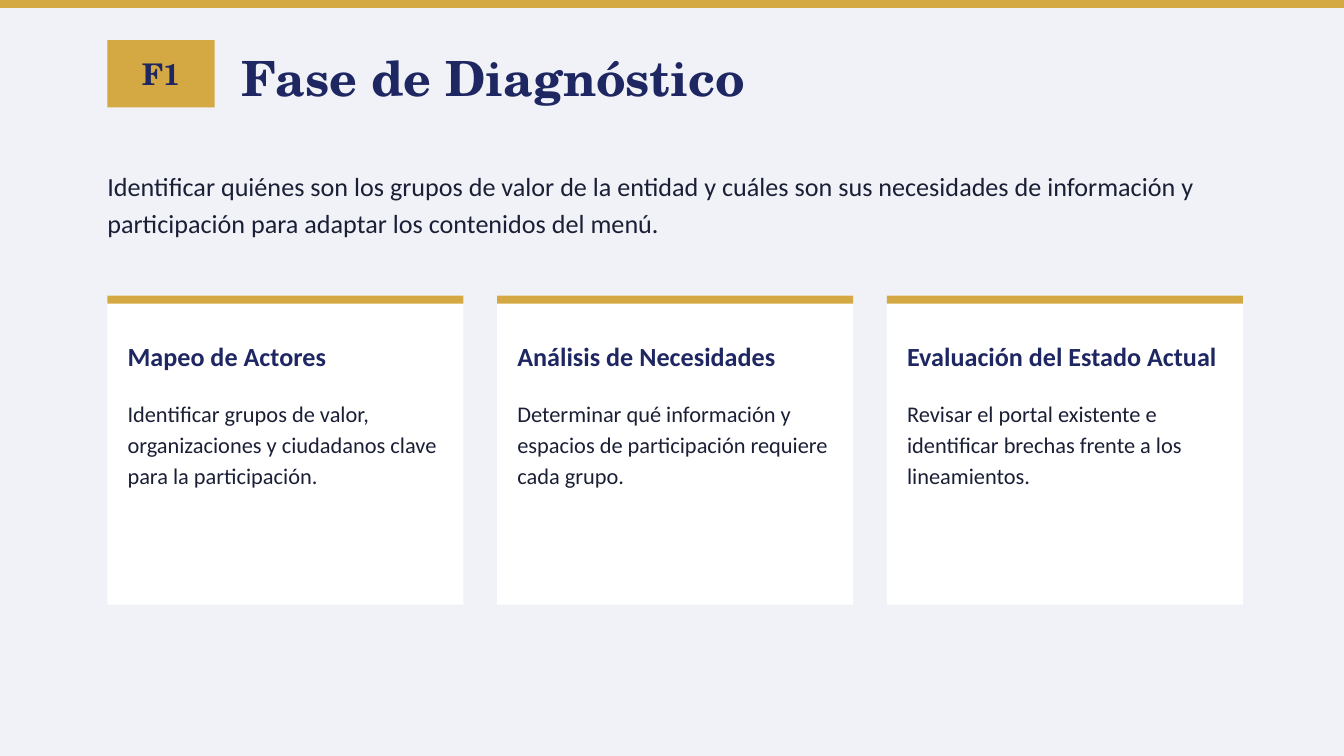
import pptx
import pptx.dml.color
import pptx.enum.shapes
import pptx.enum.text
import pptx.util

Cm = pptx.util.Cm
ALIGN = pptx.enum.text.PP_ALIGN
ANCHOR = pptx.enum.text.MSO_ANCHOR

COLORS = {
    "background": "F0F2F7",
    "gold": "D4A843",
    "navy": "1E2761",
    "ink": "1A1F36",
    "white": "FFFFFF",
}
STYLES = {
    "badge": {"name": "TeX Gyre Schola", "size": pptx.util.Pt(16), "bold": True},
    "title": {"name": "TeX Gyre Schola", "size": pptx.util.Pt(26), "bold": True},
    "intro": {"name": "Calibri", "size": pptx.util.Pt(14), "bold": False},
    "heading": {"name": "Calibri", "size": pptx.util.Pt(14), "bold": True},
    "detail": {"name": "Calibri", "size": pptx.util.Pt(12), "bold": False},
}
CARDS = [
    ("Mapeo de Actores",
     "Identificar grupos de valor, organizaciones y ciudadanos clave para la participación."),
    ("Análisis de Necesidades",
     "Determinar qué información y espacios de participación requiere cada grupo."),
    ("Evaluación del Estado Actual",
     "Revisar el portal existente e identificar brechas frente a los lineamientos."),
]
BAR = Cm(0.15)


def rgb(color):
    """Return the named palette colour."""
    return pptx.dml.color.RGBColor.from_string(COLORS[color])


def add_panel(page, box, color):
    """Draw a plain filled rectangle in the box."""
    panel = page.shapes.add_shape(pptx.enum.shapes.MSO_SHAPE.RECTANGLE, *box)
    panel.shadow.inherit = False
    panel.fill.solid()
    panel.fill.fore_color.rgb = rgb(color)
    panel.line.fill.background()
    return panel


def write(shape, text, style, color, anchor=ANCHOR.MIDDLE, align=ALIGN.LEFT, spacing=1.0):
    """Write one formatted paragraph into a shape without margins."""
    frame = shape.text_frame
    settings = {
        "word_wrap": True, "vertical_anchor": anchor,
        "auto_size": pptx.enum.text.MSO_AUTO_SIZE.NONE,
        "margin_left": 0, "margin_top": 0, "margin_right": 0, "margin_bottom": 0,
    }
    for name, value in settings.items():
        setattr(frame, name, value)
    para = frame.paragraphs[0]
    para.alignment = align
    para.line_spacing = spacing
    span = para.add_run()
    span.text = text
    for name, value in STYLES[style].items():
        setattr(span.font, name, value)
    span.font.color.rgb = rgb(color)


def add_header(page, box):
    """Place the phase badge and the slide title in the box."""
    left, top, width, height = box
    badge_width, title_offset = Cm(2.03), Cm(2.54)
    badge = add_panel(page, (left, top, badge_width, Cm(1.27)), "gold")
    write(badge, "F1", "badge", "navy", align=ALIGN.CENTER)
    title = page.shapes.title
    title.left, title.top = left + title_offset, top
    title.width, title.height = width - title_offset, height
    write(title, "Fase de Diagnóstico", "title", "navy")


def add_intro(page, box):
    """Place the introductory paragraph in the box."""
    write(page.shapes.add_textbox(*box),
          "Identificar quiénes son los grupos de valor de la entidad y cuáles son sus "
          "necesidades de información y participación para adaptar los contenidos del menú.",
          "intro", "ink", spacing=1.2)


def add_card(page, box, heading, detail):
    """Place a white card with a gold top edge, a heading and a detail text."""
    left, top, width, height = box
    inset = Cm(0.38)
    inner_left, inner_width = left + inset, width - 2 * inset
    add_panel(page, box, "white")
    add_panel(page, (left, top, width, BAR), "gold")
    heading_box = page.shapes.add_textbox(inner_left, top + Cm(0.64), inner_width, Cm(1.02))
    write(heading_box, heading, "heading", "navy")
    detail_box = page.shapes.add_textbox(inner_left, top + Cm(1.9), inner_width, Cm(3.3))
    write(detail_box, detail, "detail", "ink", anchor=ANCHOR.TOP, spacing=1.15)


def add_cards(page, box):
    """Share the box among equal cards in one row."""
    left, top, width, height = box
    gap = Cm(0.64)
    card_width = (width - gap * (len(CARDS) - 1)) // len(CARDS)
    for index, (heading, detail) in enumerate(CARDS):
        card_left = left + index * (card_width + gap)
        add_card(page, (card_left, top, card_width, height), heading, detail)


def main():
    """Build and save the deck."""
    deck = pptx.Presentation()
    deck.slide_width, deck.slide_height = Cm(25.4), Cm(14.29)
    page = deck.slides.add_slide(deck.slide_layouts.get_by_name("Title Only"))
    page.background.fill.solid()
    page.background.fill.fore_color.rgb = rgb("background")
    margin = Cm(2.03)
    add_panel(page, (0, 0, deck.slide_width, BAR), "gold")
    add_header(page, (margin, Cm(0.76), Cm(17.78), Cm(1.4)))
    add_intro(page, (margin, Cm(2.79), Cm(21.34), Cm(2.03)))
    add_cards(page, (margin, Cm(5.59), Cm(21.46), Cm(5.84)))
    deck.save("out.pptx")


if __name__ == "__main__":
    main()
